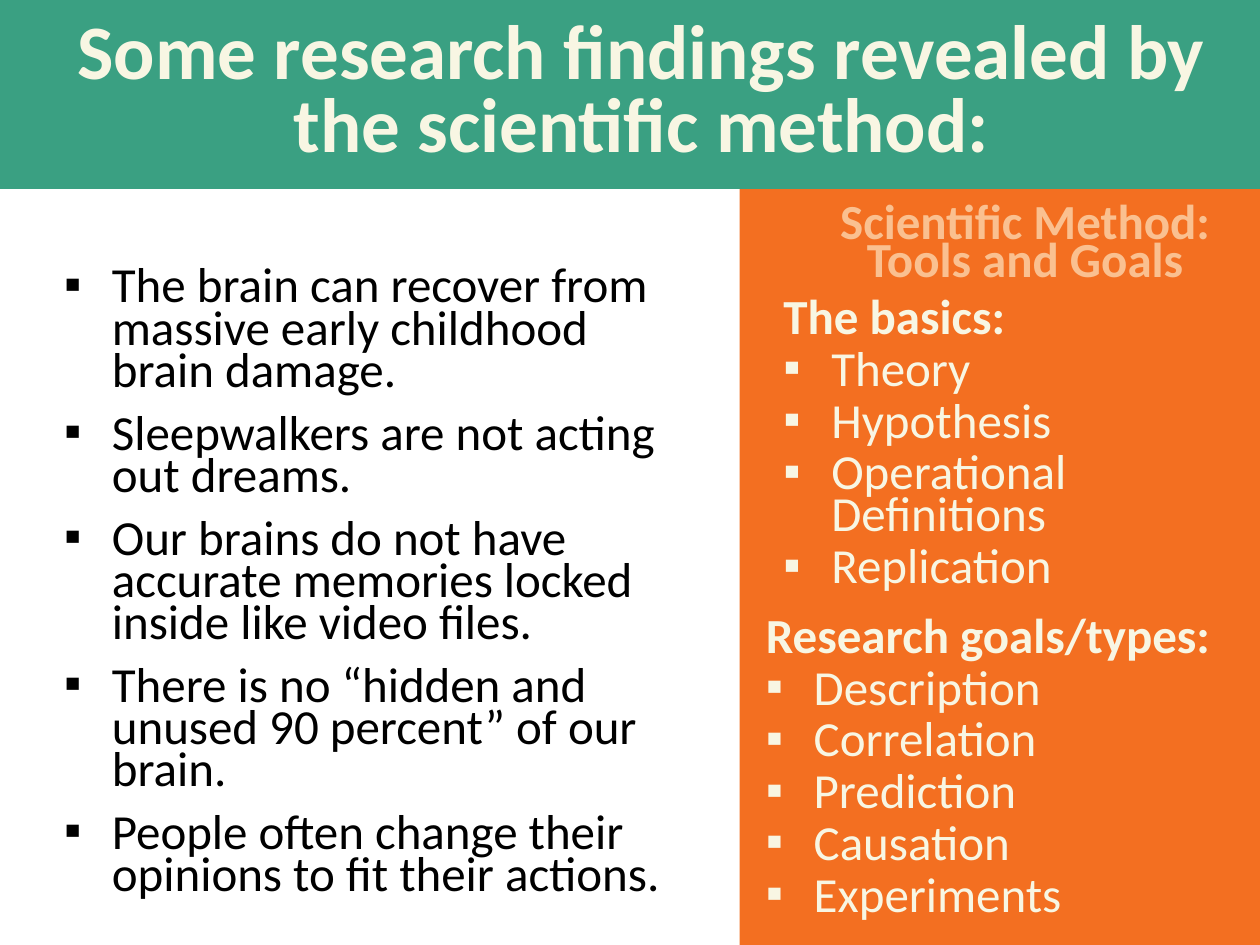
from pptx import Presentation
from pptx.dml.color import RGBColor
from pptx.enum.text import MSO_ANCHOR, MSO_AUTO_SIZE, PP_ALIGN
from pptx.oxml.ns import qn
from pptx.util import Inches, Pt
from lxml.etree import SubElement

# Content
TITLE = "Some research findings revealed by the scientific method:"
PANEL_TITLE = "Scientific Method: Tools and Goals"
FINDINGS = [
    "The brain can recover from massive early childhood brain damage.",
    "Sleepwalkers are not acting out dreams.",
    "Our brains do not have accurate memories locked inside like video files.",
    "There is no “hidden and unused 90 percent” of our brain.",
    "People often change their opinions to fit their actions.",
]
BASICS = ["Theory", "Hypothesis", "Operational Definitions", "Replication"]
GOALS = ["Description", "Correlation", "Prediction", "Causation", "Experiments"]

# Style
FONT = "Calibri"
GREEN = RGBColor(0x3A, 0xA0, 0x82)
ORANGE = RGBColor(0xF3, 0x6F, 0x21)
PEACH = RGBColor(0xFA, 0xC0, 0x90)
CREAM = RGBColor(0xF8, 0xF6, 0xE3)
BLACK = RGBColor(0, 0, 0)
INDENT = Inches(0.38)


def place(sp, box):
    sp.left, sp.top, sp.width, sp.height = map(Inches, box)


def style(p, size, color, bold, line, before=0, after=0):
    p.line_spacing = Pt(line)
    p.space_before, p.space_after = Pt(before), Pt(after)
    for r in p.runs:
        r.font.name, r.font.size, r.font.bold = FONT, Pt(size), bold
        r.font.color.rgb = color


def set_bullet(p, char=None):
    pPr = p._p.get_or_add_pPr()
    indent = INDENT if char else 0
    pPr.set("marL", str(indent))
    pPr.set("indent", str(-indent))
    if char:
        SubElement(pPr, qn("a:buFont"), typeface="Arial")
        SubElement(pPr, qn("a:buChar"), char=char)
    else:
        SubElement(pPr, qn("a:buNone"))


def fill_banner(sp, box, text, fill, insets, anchor, size, color, line, after=0):
    place(sp, box)
    sp.fill.solid()
    sp.fill.fore_color.rgb = fill
    tf = sp.text_frame
    tf.text = text
    tf.word_wrap, tf.auto_size = True, MSO_AUTO_SIZE.NONE
    tf.vertical_anchor = anchor
    (tf.margin_left, tf.margin_top,
     tf.margin_right, tf.margin_bottom) = map(Inches, insets)
    p = tf.paragraphs[0]
    p.alignment = PP_ALIGN.CENTER
    style(p, size, color, True, line, after=after)
    set_bullet(p)


def add_list(s, box, items, color, heading=None, before=0, after=0):
    tf = s.shapes.add_textbox(*map(Inches, box)).text_frame
    tf.word_wrap = True
    lines = [heading] + items if heading else items
    tf.text = "\n".join(lines)
    for i, p in enumerate(tf.paragraphs):
        is_heading = bool(heading) and i == 0
        style(p, 28, color, is_heading, 24, before, after)
        set_bullet(p, None if is_heading else "▪")


prs = Presentation()
prs.slide_width, prs.slide_height = Inches(10), Inches(7.5)
s = prs.slides.add_slide(prs.slide_layouts[1])

# Title band over the side panel
title, panel = s.shapes.title, s.placeholders[1]
title._element.addprevious(panel._element)
fill_banner(panel, (5.87, 1.47, 4.13, 6.05), PANEL_TITLE, ORANGE,
            (0.5, 0.2, 0.1, 0.2), MSO_ANCHOR.TOP, 28, PEACH, 22, after=6)
fill_banner(title, (-0.01, 0, 10.01, 1.5), TITLE, GREEN,
            (0.3, 0.05, 0.1, 0.05), MSO_ANCHOR.MIDDLE, 44, CREAM, 42)

# Findings on the left, tools and goals on the panel
add_list(s, (0.41, 2.1, 5.05, 5.15), FINDINGS, BLACK, after=12)
add_list(s, (6.12, 2.35, 3.74, 2.17), BASICS, CREAM, "The basics:", before=5.6)
add_list(s, (5.98, 4.88, 3.88, 2.38), GOALS, CREAM, "Research goals/types:", before=5.6)

prs.save("out.pptx")
